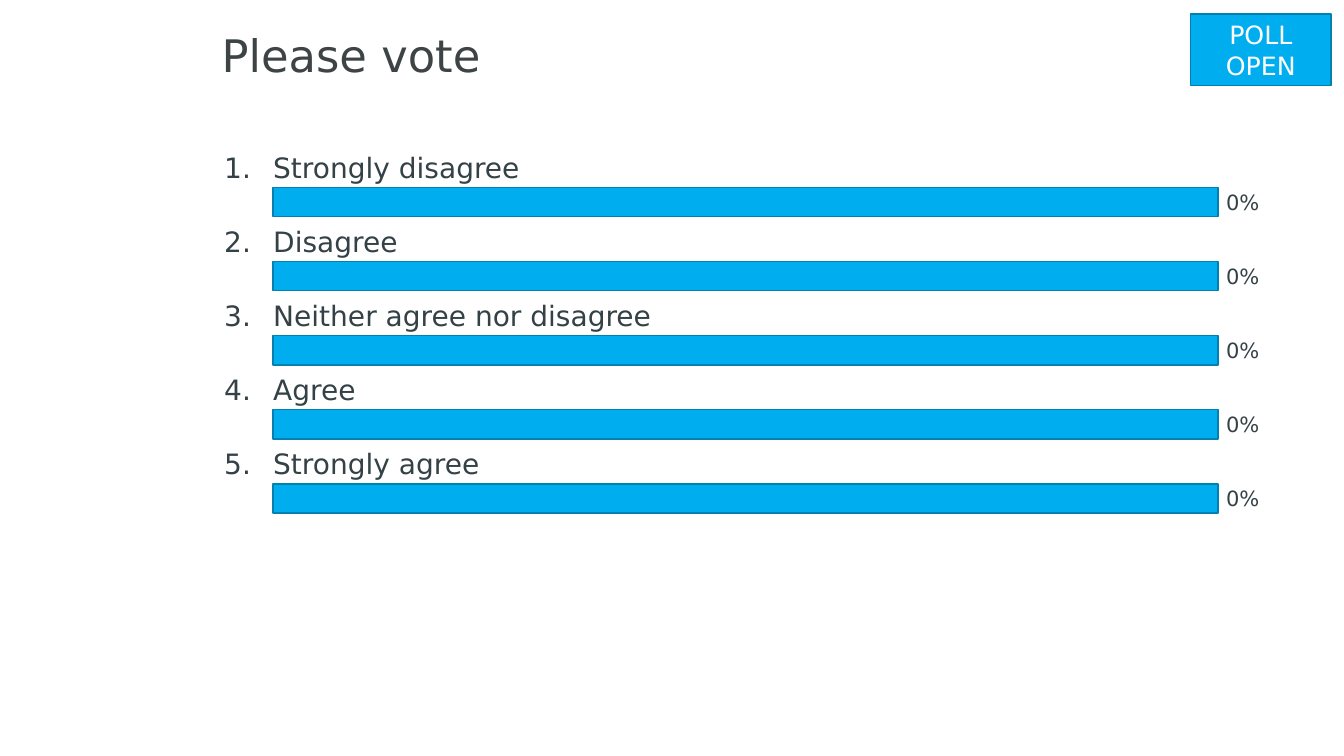
from pptx import Presentation
from pptx.dml.color import RGBColor
from pptx.enum.shapes import MSO_SHAPE
from pptx.enum.text import MSO_ANCHOR, MSO_AUTO_SIZE, PP_ALIGN
from pptx.util import Inches, Pt

COLORS = {"title": "3E4445", "text": "344146", "bar": "00AEEF",
          "edge": "0081B1", "white": "FFFFFF"}
FONT = "DejaVu Sans"

deck = Presentation()
deck.slide_width, deck.slide_height = Inches(13.33), Inches(7.5)
slide = deck.slides.add_slide(deck.slide_layouts[6])


def write(shape, text, size, color, align=PP_ALIGN.LEFT, **form):
    frame = shape.text_frame
    frame.text = text
    form = {"word_wrap": True, "auto_size": MSO_AUTO_SIZE.SHAPE_TO_FIT_TEXT,
            "vertical_anchor": MSO_ANCHOR.TOP, **form}
    for name, value in form.items():
        setattr(frame, name, value)
    line = frame.paragraphs[0]
    line.alignment = align
    font = line.runs[0].font
    for name, value in {"name": FONT, "size": Pt(size)}.items():
        setattr(font, name, value)
    font.color.rgb = RGBColor.from_string(COLORS[color])
    return line


def add_bar(*place):
    bar = slide.shapes.add_shape(MSO_SHAPE.RECTANGLE, *map(Inches, place))
    bar.shadow.inherit = False
    bar.fill.solid()
    bar.fill.fore_color.rgb = RGBColor.from_string(COLORS["bar"])
    bar.line.color.rgb = RGBColor.from_string(COLORS["edge"])
    bar.line.width = Pt(1)
    return bar


# Title
title = slide.shapes.add_textbox(Inches(2.1), Inches(0.29), Inches(9.52), Inches(1.06))
head = write(title, "Please vote", 32, "title", auto_size=MSO_AUTO_SIZE.NONE)
head.line_spacing = 0.9

# Answers: number, label, share and bar
answers = ["Strongly disagree", "Disagree", "Neither agree nor disagree",
           "Agree", "Strongly agree"]
for row, answer in enumerate(answers):
    top = 1.43 + row * 0.735
    # left, offset, width, height, text, size, align, wrap, margins
    parts = [
        (2.1, 0, 0.61, 0.39, f"{row + 1}.", 20, PP_ALIGN.RIGHT, False, (0.1, 0.06, 0.22, 0)),
        (2.71, 0, 10.08, 0.42, answer, 20, PP_ALIGN.LEFT, True, (0, 0.06, 0, 0.03)),
        (12.08, 0.45, 0.71, 0.25, "0%", 15, PP_ALIGN.LEFT, False, (0.08, 0, 0, 0)),
    ]
    for left, down, width, height, text, size, align, wrap, gaps in parts:
        box = slide.shapes.add_textbox(Inches(left), Inches(top + down),
                                       Inches(width), Inches(height))
        sides = ("margin_left", "margin_top", "margin_right", "margin_bottom")
        write(box, text, size, "text", align, word_wrap=wrap,
              **dict(zip(sides, map(Inches, gaps))))
    add_bar(2.71, top + 0.43, 9.37, 0.29)

# Poll status
status = add_bar(11.81, 0.14, 1.39, 0.71)
write(status, "POLL OPEN", 18, "white", PP_ALIGN.CENTER,
      vertical_anchor=MSO_ANCHOR.MIDDLE)

deck.save("out.pptx")
